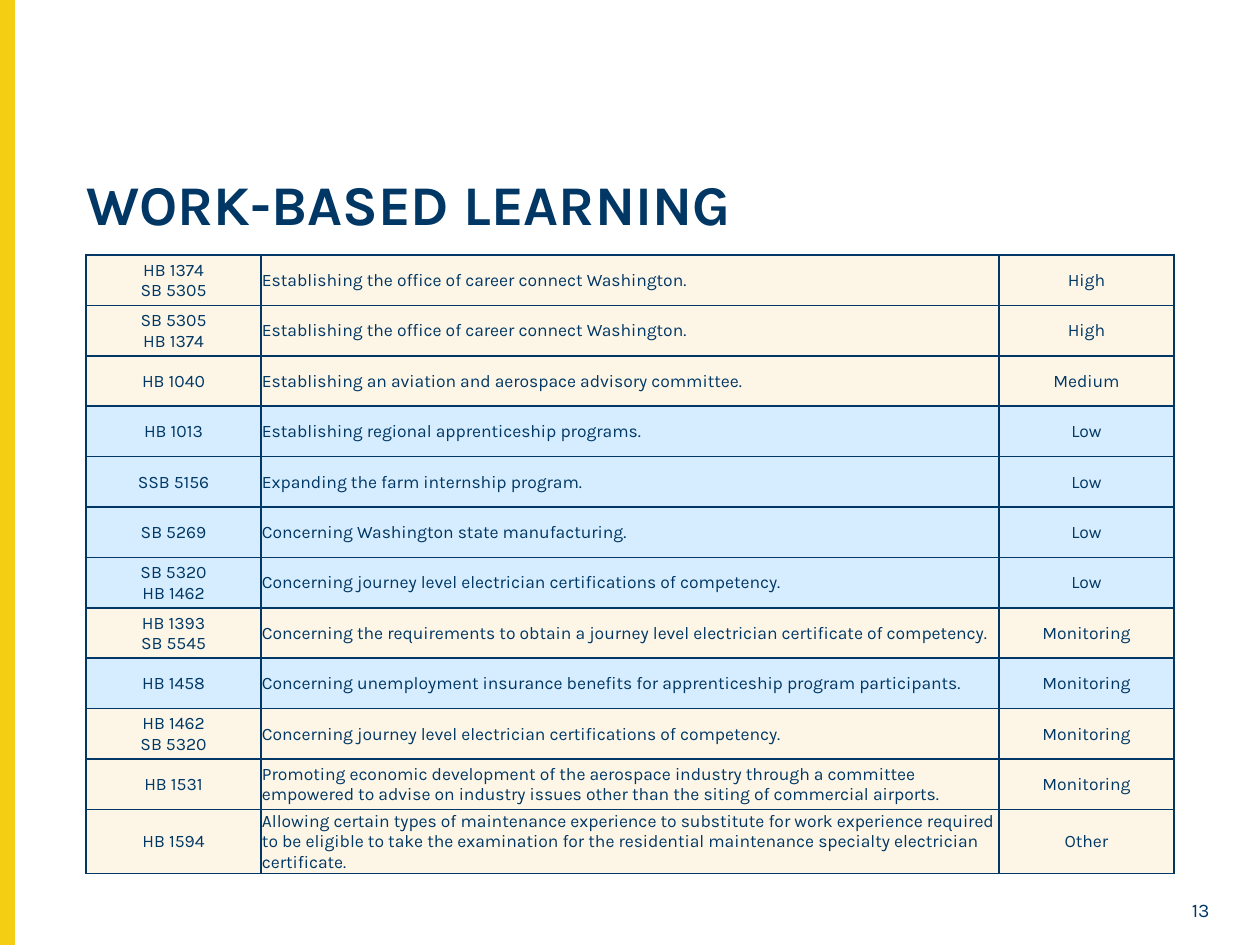
from lxml import etree
from pptx import Presentation
from pptx.dml.color import RGBColor
from pptx.enum.shapes import MSO_SHAPE
from pptx.enum.text import MSO_ANCHOR, PP_ALIGN
from pptx.oxml.ns import qn
from pptx.util import Pt

LEFT, CENTER, RIGHT = PP_ALIGN.LEFT, PP_ALIGN.CENTER, PP_ALIGN.RIGHT
TOP, MIDDLE = MSO_ANCHOR.TOP, MSO_ANCHOR.MIDDLE
RECT = MSO_SHAPE.RECTANGLE

NAVY = RGBColor(0x00, 0x37, 0x64)
GOLD = RGBColor(0xF4, 0xCE, 0x12)
CREAM = RGBColor(0xFD, 0xF6, 0xE7)
SKY = RGBColor(0xD6, 0xED, 0xFF)
FONT = "Karla"

TITLE = "WORK-BASED LEARNING"
PAGE = "13"
BILLS = [
    (["HB 1374", "SB 5305"], "Establishing the office of career connect Washington.", "High", CREAM),
    (["SB 5305", "HB 1374"], "Establishing the office of career connect Washington.", "High", CREAM),
    (["HB 1040"], "Establishing an aviation and aerospace advisory committee.", "Medium", CREAM),
    (["HB 1013"], "Establishing regional apprenticeship programs.", "Low", SKY),
    (["SSB 5156"], "Expanding the farm internship program.", "Low", SKY),
    (["SB 5269"], "Concerning Washington state manufacturing.", "Low", SKY),
    (["SB 5320", "HB 1462"],
     "Concerning journey level electrician certifications of competency.", "Low", SKY),
    (["HB 1393", "SB 5545"],
     "Concerning the requirements to obtain a journey level electrician certificate of competency.",
     "Monitoring", CREAM),
    (["HB 1458"],
     "Concerning unemployment insurance benefits for apprenticeship program participants.",
     "Monitoring", SKY),
    (["HB 1462", "SB 5320"],
     "Concerning journey level electrician certifications of competency.", "Monitoring", CREAM),
    (["HB 1531"],
     "Promoting economic development of the aerospace industry through a committee "
     "empowered to advise on industry issues other than the siting of commercial airports.",
     "Monitoring", CREAM),
    (["HB 1594"],
     "Allowing certain types of maintenance experience to substitute for work experience "
     "required to be eligible to take the examination for the residential maintenance "
     "specialty electrician certificate.", "Other", CREAM),
]
COLS = [(175, CENTER), (738, LEFT), (175, CENTER)]
TABLE_X, TABLE_Y, TABLE_H = 86, 255, 605


def px(n):
    return round(n * 914400 / 126)


def write(frame, lines, size, align, bold=False):
    for i, line in enumerate(lines):
        para = frame.add_paragraph() if i else frame.paragraphs[0]
        para.alignment = align
        run = para.add_run()
        run.text = line
        font = run.font
        font.name, font.size, font.bold = FONT, Pt(size), bold
        font.color.rgb = NAVY


def add_text(slide, box, text, size, align, anchor, bold=False):
    frame = slide.shapes.add_textbox(*map(px, box)).text_frame
    frame.word_wrap = True
    frame.vertical_anchor = anchor
    write(frame, [text], size, align, bold)
    return frame


def add_borders(cell):
    """Put the four border lines ahead of the fill, as the schema asks."""
    props = cell._tc.get_or_add_tcPr()
    for i, side in enumerate(("a:lnL", "a:lnR", "a:lnT", "a:lnB")):
        line = etree.Element(qn(side), w=str(Pt(1)))
        fill = etree.SubElement(line, qn("a:solidFill"))
        etree.SubElement(fill, qn("a:srgbClr"), val=str(NAVY))
        props.insert(i, line)


def fill_cell(cell, lines, align, tint):
    cell.margin_left = cell.margin_right = cell.margin_top = px(1)
    cell.margin_bottom = 0
    cell.vertical_anchor = MIDDLE
    cell.fill.solid()
    cell.fill.fore_color.rgb = tint
    write(cell.text_frame, lines, 10, align)
    add_borders(cell)


def add_bills(slide):
    width = sum(w for w, _ in COLS)
    table = slide.shapes.add_table(
        len(BILLS), len(COLS), px(TABLE_X), px(TABLE_Y), px(width), px(TABLE_H)).table
    table.first_row = table.horz_banding = False
    for col, (w, _) in zip(table.columns, COLS):
        col.width = px(w)
    for r, (codes, about, level, tint) in enumerate(BILLS):
        table.rows[r].height = px(TABLE_H) // len(BILLS)
        for c, lines in enumerate((codes, [about], [level])):
            fill_cell(table.cell(r, c), lines, COLS[c][1], tint)


def main():
    deck = Presentation()
    deck.slide_width, deck.slide_height = px(1260), px(945)
    slide = deck.slides.add_slide(deck.slide_layouts[6])

    bar = slide.shapes.add_shape(RECT, 0, 0, px(14), px(945))
    bar.shadow.inherit = False
    bar.fill.solid()
    bar.fill.fore_color.rgb = bar.line.color.rgb = GOLD
    bar.line.width = Pt(1)

    title = add_text(slide, (74, 171, 1149, 93), TITLE, 32, LEFT, TOP, bold=True)
    title.paragraphs[0].line_spacing = 0.9
    add_text(slide, (1158, 893, 64, 33), PAGE, 11, RIGHT, MIDDLE)
    add_bills(slide)
    deck.save("out.pptx")


if __name__ == "__main__":
    main()
